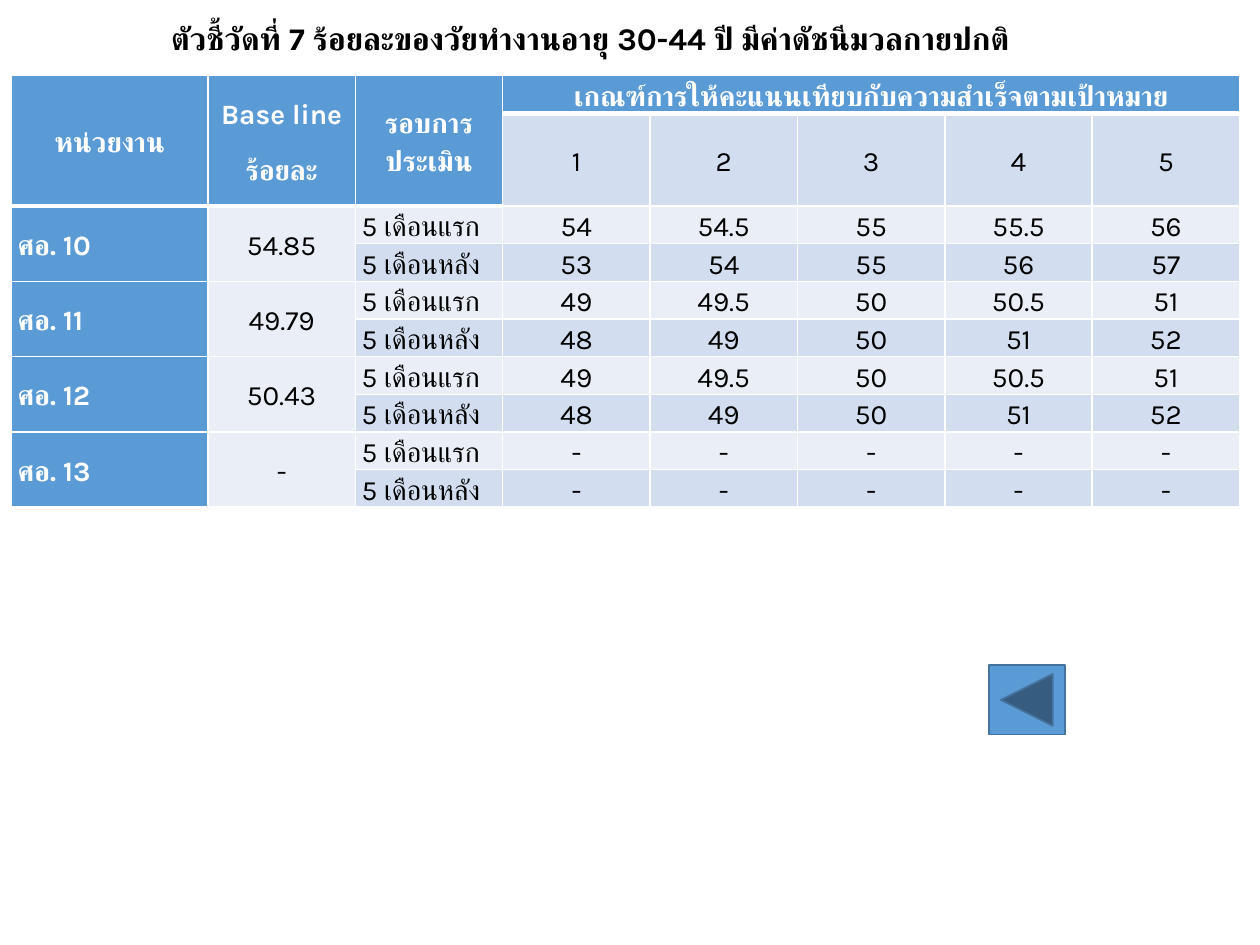
from lxml import etree
from pptx import Presentation, util as u
from pptx.dml.color import RGBColor
from pptx.enum import shapes, text
from pptx.oxml.ns import qn

COLORS = {"blue": "5B9BD5", "outline": "43739E", "light": "EAEFF7",
          "band": "D2DEEF", "white": "FFFFFF", "black": "000000"}
FONT = "Karla"
TITLE = "ตัวชี้วัดที่ 7 ร้อยละของวัยทำงานอายุ 30-44 ปี มีค่าดัชนีมวลกายปกติ"
HEADINGS = ["หน่วยงาน", "Base line\nร้อยละ", "รอบการประเมิน",
            "เกณฑ์การให้คะแนนเทียบกับความสำเร็จตามเป้าหมาย"]
LEVELS = ["1", "2", "3", "4", "5"]
ROUNDS = ["5 เดือนแรก", "5 เดือนหลัง"]
CENTERS = [
    ("ศอ. 10", "54.85", ["54 54.5 55 55.5 56", "53 54 55 56 57"]),
    ("ศอ. 11", "49.79", ["49 49.5 50 50.5 51", "48 49 50 51 52"]),
    ("ศอ. 12", "50.43", ["49 49.5 50 50.5 51", "48 49 50 51 52"]),
    ("ศอ. 13", "-", ["- - - - -", "- - - - -"]),
]
COLUMN_WIDTHS = [1.56] + [1.17] * 7
ROW_HEIGHTS = [0.22, 0.36] + [0.22] * 8


def rgb(name):
    """Return the named colour."""
    return RGBColor.from_string(COLORS[name])


def style_paragraph(para, size, color, bold, align=None):
    """Set spacing, alignment and font of one paragraph."""
    para.line_spacing = 1.15
    para.space_after = u.Pt(10)
    para.alignment = align
    font = para.font
    font.size, font.bold, font.name = u.Pt(size), bold, FONT
    font.color.rgb = rgb(color)
    etree.SubElement(para._p.pPr.find(qn("a:defRPr")), qn("a:cs"), typeface=FONT)


def is_header(row, column):
    """Tell whether a grid position belongs to the blue heading."""
    return row == 0 or (row == 1 and column < 3)


def add_borders(cell, row, column):
    """Draw white cell edges, thicker under the heading."""
    header = is_header(row, column)
    below_header = row > 0 and not header and is_header(row - 1, column)
    widths = {"L": 1, "R": 1, "T": 3 if below_header else 1, "B": 3 if header else 1}
    properties = cell._tc.get_or_add_tcPr()
    for index, (side, width) in enumerate(widths.items()):
        line = etree.Element(qn(f"a:ln{side}"), w=str(u.Pt(width)))
        fill = etree.SubElement(line, qn("a:solidFill"))
        etree.SubElement(fill, qn("a:srgbClr"), val=COLORS["white"])
        properties.insert(index, line)


def fill_cell(cell, words, fill, align=text.PP_ALIGN.CENTER):
    """Write and style one table cell."""
    cell.text = words
    cell.fill.solid()
    cell.fill.fore_color.rgb = rgb(fill)
    heading = fill == "blue"
    for para in cell.text_frame.paragraphs:
        style_paragraph(para, 16, "white" if heading else "black", heading, align)


def add_score_table(page):
    """Add the table of centres, rounds and score thresholds."""
    frame = page.shapes.add_table(len(ROW_HEIGHTS), len(COLUMN_WIDTHS), u.Inches(0.09),
                                  u.Inches(0.6), u.Inches(9.74), u.Inches(3.21))
    table = frame.table
    table.first_row = table.horz_banding = False
    for column, width in zip(table.columns, COLUMN_WIDTHS):
        column.width = u.Inches(width)
    for row, height in zip(table.rows, ROW_HEIGHTS):
        row.height = u.Inches(height)
    frame.height = u.Inches(3.21)
    for row in range(len(ROW_HEIGHTS)):
        for column in range(len(COLUMN_WIDTHS)):
            cell = table.cell(row, column)
            cell.margin_left = cell.margin_right = u.Inches(0.05)
            cell.margin_top = cell.margin_bottom = 0
            cell.vertical_anchor = text.MSO_ANCHOR.MIDDLE
            add_borders(cell, row, column)

    for column, heading in enumerate(HEADINGS):
        end = (1, column) if column < 3 else (0, 7)
        table.cell(0, column).merge(table.cell(*end))
        fill_cell(table.cell(0, column), heading, "blue")
    for column, level in enumerate(LEVELS, 3):
        fill_cell(table.cell(1, column), level, "band")
    for index, (center, baseline, scores) in enumerate(CENTERS):
        top = 2 + 2 * index
        for column in range(2):
            table.cell(top, column).merge(table.cell(top + 1, column))
        fill_cell(table.cell(top, 0), center, "blue", text.PP_ALIGN.JUSTIFY)
        fill_cell(table.cell(top, 1), baseline, "light")
        for row, (label, values) in enumerate(zip(ROUNDS, scores), top):
            fill = "band" if row % 2 else "light"
            fill_cell(table.cell(row, 2), label, fill, text.PP_ALIGN.JUSTIFY)
            for column, value in enumerate(values.split(), 3):
                fill_cell(table.cell(row, column), value, fill)


def add_title(page):
    """Add the indicator title."""
    box = page.shapes.add_textbox(u.Inches(1.26), u.Inches(0.06),
                                  u.Inches(7.81), u.Inches(0.45))
    box.text_frame.text = TITLE
    box.text_frame.word_wrap = False
    box.text_frame.auto_size = text.MSO_AUTO_SIZE.SHAPE_TO_FIT_TEXT
    style_paragraph(box.text_frame.paragraphs[0], 18, "black", True)


def add_back_button(page):
    """Add the back button."""
    button = page.shapes.add_shape(shapes.MSO_SHAPE.ACTION_BUTTON_BACK_OR_PREVIOUS,
                                   u.Inches(7.85), u.Inches(5.28),
                                   u.Inches(0.6), u.Inches(0.55))
    button.shadow.inherit = False
    button.fill.solid()
    button.fill.fore_color.rgb = rgb("blue")
    button.line.color.rgb = rgb("outline")
    button.line.width = u.Pt(1)


def main():
    """Build and save the slide."""
    deck = Presentation()
    deck.slide_width, deck.slide_height = u.Inches(10), u.Inches(7.5)
    page = deck.slides.add_slide(deck.slide_layouts[6])
    add_score_table(page)
    add_title(page)
    add_back_button(page)
    deck.save("out.pptx")


if __name__ == "__main__":
    main()
